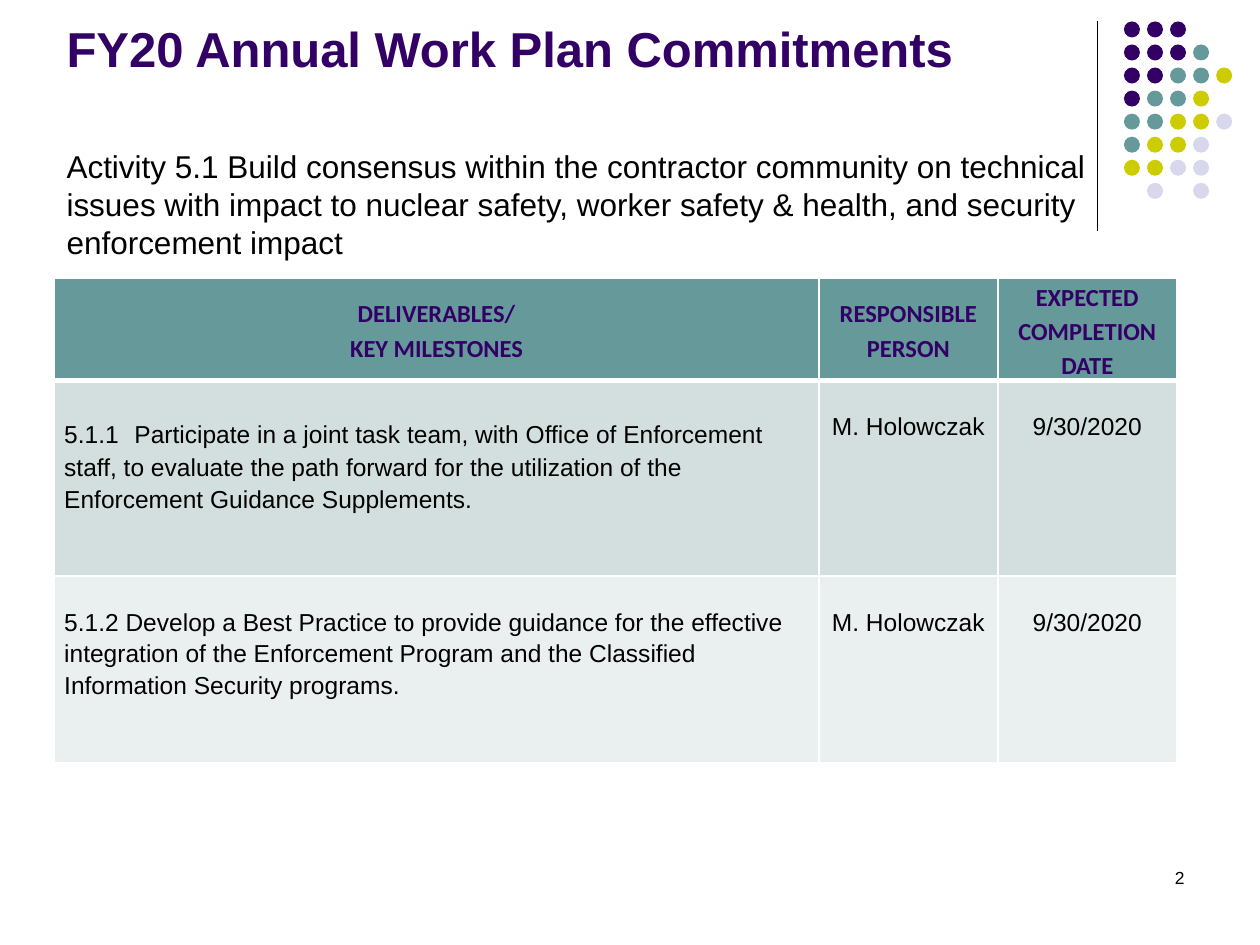
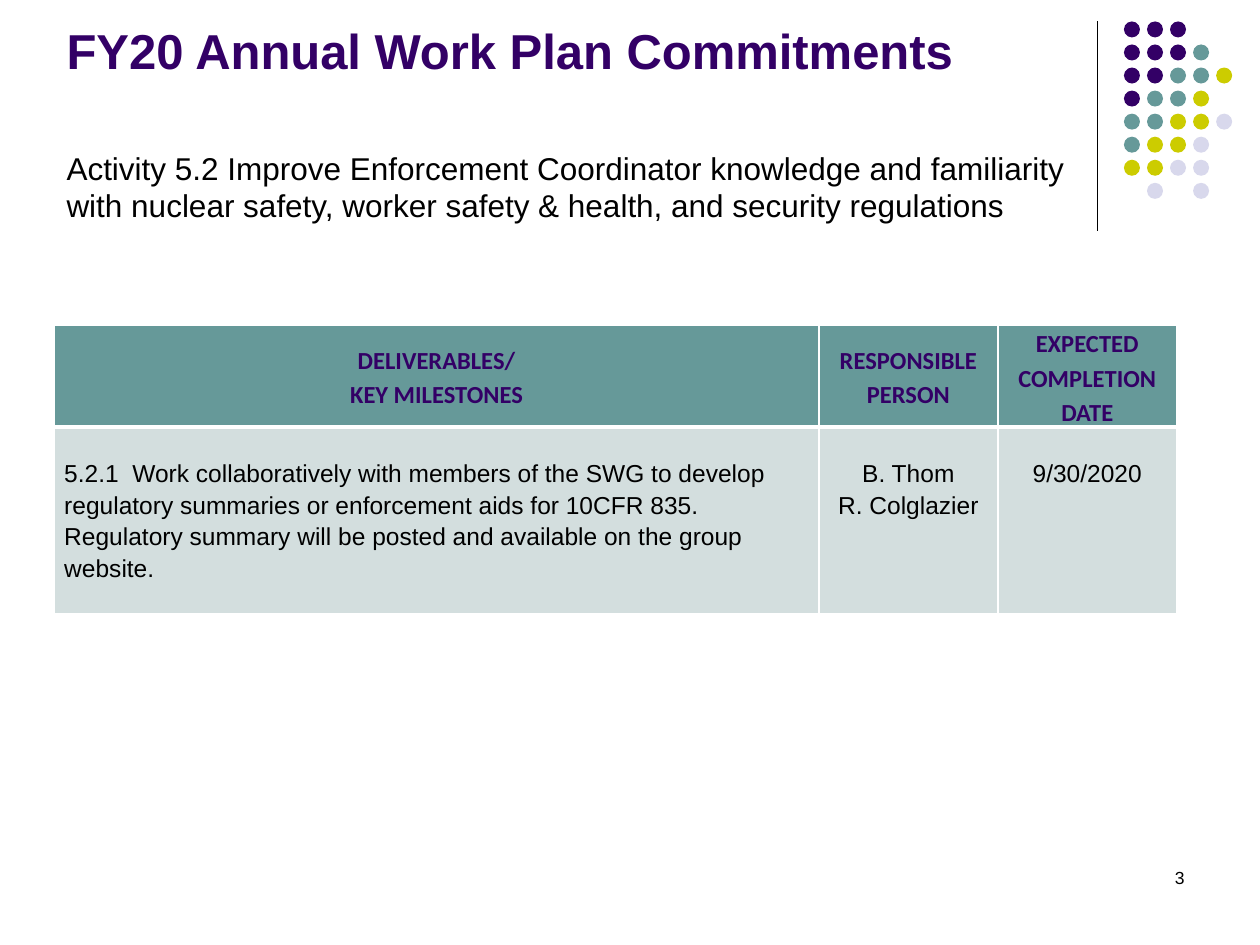
from dataclasses import dataclass
from typing import NamedTuple

from lxml import etree
from pptx import Presentation
from pptx.dml.color import RGBColor
from pptx.enum.shapes import MSO_CONNECTOR, MSO_SHAPE
from pptx.enum.text import MSO_ANCHOR, PP_ALIGN
from pptx.oxml.ns import qn
from pptx.slide import Slide
from pptx.table import _Cell
from pptx.text.text import TextFrame
from pptx.util import Emu, Inches, Pt

OVAL, LINE = MSO_SHAPE.OVAL, MSO_CONNECTOR.STRAIGHT
LEFT, CENTER, RIGHT = PP_ALIGN.LEFT, PP_ALIGN.CENTER, PP_ALIGN.RIGHT
TOP, MIDDLE, BOTTOM = MSO_ANCHOR.TOP, MSO_ANCHOR.MIDDLE, MSO_ANCHOR.BOTTOM

WIDE, HIGH = Inches(10), Inches(7.5)
COLS = 100  # square grid: 100 columns by 75 rows


@dataclass(frozen=True)
class Theme:
    plum: str = "330066"
    teal: str = "669999"
    lime: str = "CCCC00"
    mist: str = "D8D8EC"
    ink: str = "000000"
    white: str = "FFFFFF"
    bands: tuple[str, str] = ("D3DEDE", "EAEFEF")
    font: str = "Arial"
    head_font: str = "Calibri"
    title: int = 28
    body: int = 18
    cell: int = 14
    small: int = 10
    lead: float = 1.15


THEME = Theme()


class Box(NamedTuple):
    """A place on the grid, in columns and rows."""
    left: float
    top: float
    width: float
    height: float


class Run(NamedTuple):
    text: str
    size: int = THEME.cell


class Task(NamedTuple):
    goal: list[Run]
    owner: str
    due: str
    height: float


class Topic(NamedTuple):
    page: int
    title_top: float
    intro: str
    intro_top: float
    table_top: float
    tasks: list[Task]


TITLE = "FY20 Annual Work Plan Commitments"
HEADS = ("DELIVERABLES/\nKEY MILESTONES", "RESPONSIBLE PERSON",
         "EXPECTED COMPLETION DATE")
WIDTHS = (60.7, 14.2, 14.2)
HEAD_ROW = 8.1
PAD, DROP = 0.8, 2.3  # cell side inset, and the gap above each entry
EDGE = 4.3

DOTS = ("PPP", "PPPT", "PPTTY", "PTTY", "TTYYL", "TYYL", "YYLL", " L L")
HUES = {"P": THEME.plum, "T": THEME.teal, "Y": THEME.lime, "L": THEME.mist}
DOT_X, DOT_Y, DOT_GAP, DOT_SIZE = 89.2, 1.7, 1.83, 1.27

DUE = "9/30/2020"
TOPICS = [
    Topic(2, 1.6,
          "Activity 5.1 Build consensus within the contractor community on "
          "technical issues with impact to nuclear safety, worker safety & "
          "health, and security enforcement impact", 11.2, 22.1, [
              Task([Run("5.1.1 "), Run(" ", THEME.body),
                    Run("Participate in a joint task team, with Office of "
                        "Enforcement staff, to evaluate the path forward for "
                        "the utilization of the Enforcement Guidance "
                        "Supplements.")], "M. Holowczak", DUE, 15.5),
              Task([Run("5.1.2 Develop a Best Practice to provide guidance "
                        "for the effective integration of the Enforcement "
                        "Program and the Classified Information Security "
                        "programs.")], "M. Holowczak", DUE, 14.8)]),
    Topic(3, 1.8,
          "Activity 5.2 Improve Enforcement Coordinator knowledge and "
          "familiarity with nuclear safety, worker safety & health, and "
          "security regulations", 11.3, 25.8, [
              Task([Run("5.2.1  Work collaboratively with members of the SWG "
                        "to develop regulatory summaries or enforcement aids "
                        "for 10CFR 835.  Regulatory summary will be posted "
                        "and available on the group website.")],
                   "B. Thom\nR. Colglazier", DUE, 14.8)]),
]


def grid(count: float) -> Emu:
    return Emu(round(WIDE * count / COLS))


def place(box: Box) -> list[Emu]:
    return [grid(part) for part in box]


def tint(code: str) -> RGBColor:
    return RGBColor.from_string(code)


def write(frame: TextFrame, text: str | list[Run], *, size: int = THEME.cell,
          font: str = THEME.font, color: str = THEME.ink, bold: bool = False,
          align: PP_ALIGN = LEFT, lead: float = 1.0) -> None:
    """Fill a frame with runs, or with text split into lines."""
    frame.word_wrap = True
    if isinstance(text, str):
        lines = [[Run(line, size)] for line in text.split("\n")]
    else:
        lines = [text]
    for at, line in enumerate(lines):
        para = frame.add_paragraph() if at else frame.paragraphs[0]
        para.alignment = align
        para.line_spacing = lead
        for part in line:
            run = para.add_run()
            run.text = part.text
            run.font.size = Pt(part.size)
            run.font.name = font
            run.font.bold = bold
            run.font.color.rgb = tint(color)


def add_text(slide: Slide, box: Box, text: str, anchor: MSO_ANCHOR = TOP,
             **style) -> None:
    frame = slide.shapes.add_textbox(*place(box)).text_frame
    frame.vertical_anchor = anchor
    write(frame, text, **style)


def add_dots(slide: Slide) -> None:
    for row, marks in enumerate(DOTS):
        for col, mark in enumerate(marks):
            if mark not in HUES:
                continue
            box = Box(DOT_X + col * DOT_GAP, DOT_Y + row * DOT_GAP,
                      DOT_SIZE, DOT_SIZE)
            dot = slide.shapes.add_shape(OVAL, *place(box))
            dot.shadow.inherit = False
            dot.fill.solid()
            dot.fill.fore_color.rgb = tint(HUES[mark])
            dot.line.fill.background()


def add_rule(slide: Slide) -> None:
    ends = [grid(part) for part in (87.1, 1.7, 87.1, 18.3)]
    rule = slide.shapes.add_connector(LINE, *ends)
    rule.line.width = Pt(0.75)
    rule.line.color.rgb = tint(THEME.ink)
    etree.SubElement(rule._element.spPr, qn("a:effectLst"))


def paint(cell: _Cell, color: str, edges: dict[str, int]) -> None:
    """Set white borders, in points by side, and then the fill."""
    props = cell._tc.get_or_add_tcPr()
    for side, width in edges.items():
        line = etree.SubElement(props, qn(f"a:ln{side}"), w=str(Pt(width)))
        fill = etree.SubElement(line, qn("a:solidFill"))
        etree.SubElement(fill, qn("a:srgbClr"), val=THEME.white)
    cell.fill.solid()
    cell.fill.fore_color.rgb = tint(color)


def set_cell(cell: _Cell, text: str | list[Run], fill: str,
             edges: dict[str, int], drop: float, anchor: MSO_ANCHOR,
             **style) -> None:
    paint(cell, fill, edges)
    cell.margin_left = cell.margin_right = grid(PAD)
    cell.margin_top, cell.margin_bottom = grid(drop), 0
    cell.vertical_anchor = anchor
    write(cell.text_frame, text, lead=THEME.lead, **style)


def add_tasks(slide: Slide, topic: Topic) -> None:
    heights = [HEAD_ROW] + [task.height for task in topic.tasks]
    box = Box(EDGE, topic.table_top, sum(WIDTHS), sum(heights))
    table = slide.shapes.add_table(len(heights), len(WIDTHS),
                                   *place(box)).table
    table.horz_banding = False
    for col, width in zip(table.columns, WIDTHS):
        col.width = grid(width)
    for row, height in zip(table.rows, heights):
        row.height = grid(height)

    for col, head in enumerate(HEADS):
        set_cell(table.cell(0, col), head, THEME.teal,
                 {"L": 1, "R": 1, "T": 1, "B": 3}, 0, MIDDLE,
                 font=THEME.head_font, color=THEME.plum, bold=True,
                 align=CENTER)
    for row, task in enumerate(topic.tasks, 1):
        edges = {"L": 1, "R": 1, "T": 3 if row == 1 else 1, "B": 1}
        band = THEME.bands[(row - 1) % 2]
        for col, text in enumerate((task.goal, task.owner, task.due)):
            set_cell(table.cell(row, col), text, band, edges, DROP, TOP,
                     align=CENTER if col else LEFT)


def add_topic(slide: Slide, topic: Topic) -> None:
    add_rule(slide)
    add_dots(slide)
    add_text(slide, Box(EDGE, topic.title_top, 82.5, 5), TITLE, BOTTOM,
             size=THEME.title, color=THEME.plum, bold=True)
    add_text(slide, Box(71.7, 68.3, 23.3, 5), str(topic.page),
             size=THEME.small, align=RIGHT)
    add_tasks(slide, topic)
    add_text(slide, Box(EDGE, topic.intro_top, 83.3, 10), topic.intro,
             size=THEME.body)


def main() -> None:
    deck = Presentation()
    deck.slide_width, deck.slide_height = WIDE, HIGH
    blank = deck.slide_layouts[6]
    for topic in TOPICS:
        add_topic(deck.slides.add_slide(blank), topic)
    deck.save("out.pptx")


if __name__ == "__main__":
    main()
